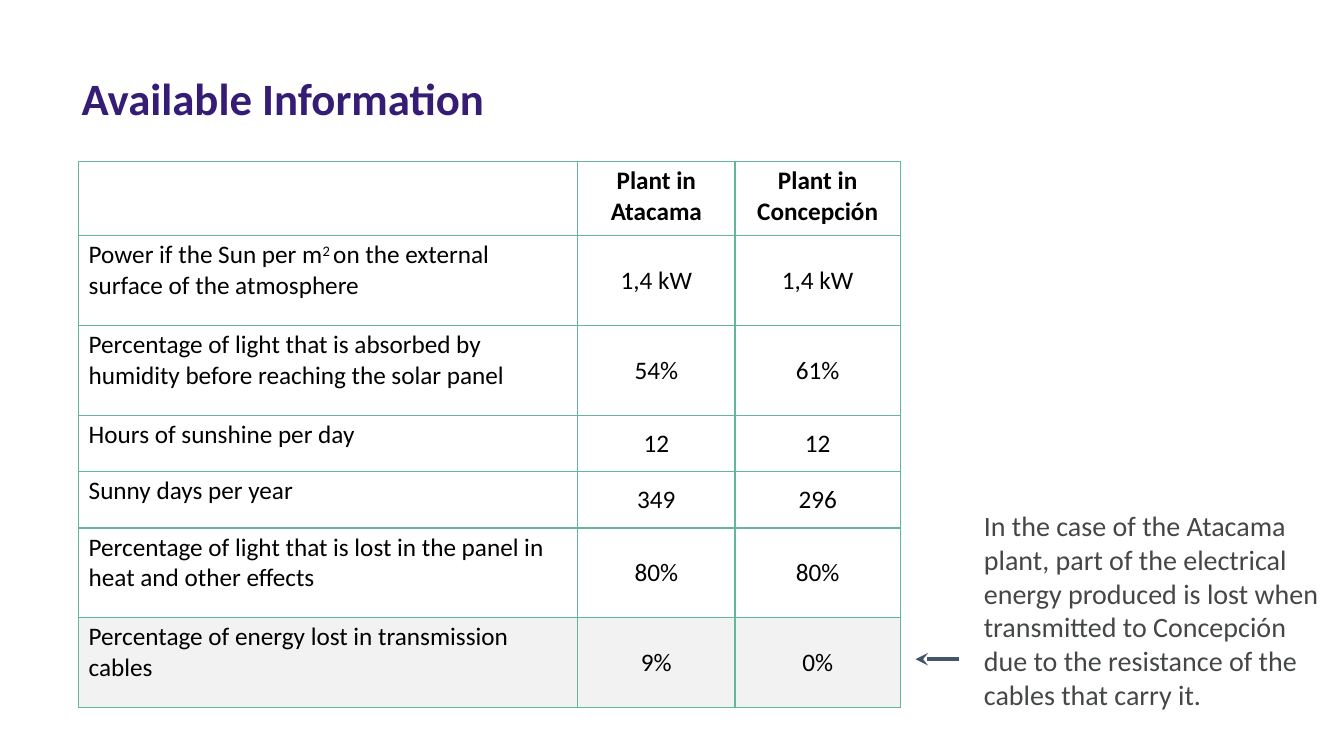
from dataclasses import dataclass
from typing import NamedTuple

from lxml.etree import SubElement
from pptx import Presentation
from pptx.dml.color import RGBColor
from pptx.enum.shapes import MSO_CONNECTOR
from pptx.enum.text import MSO_ANCHOR, PP_ALIGN
from pptx.oxml.ns import qn
from pptx.util import Inches, Pt


@dataclass(frozen=True)
class Theme:
    font: str = "Calibri"
    title_color: str = "351C75"
    table_color: str = "000000"
    note_color: str = "444746"
    border_color: str = "62B799"
    highlight_color: str = "F2F2F2"
    arrow_color: str = "44546A"
    title_size: int = 32
    table_size: int = 18
    note_size: int = 20


class Piece(NamedTuple):
    text: str
    baseline: int = 0


class Row(NamedTuple):
    height: float
    label: tuple[Piece, ...]
    atacama: str
    concepcion: str
    header: bool = False
    highlight: bool = False


THEME = Theme()
COLUMN_WIDTHS = (4.95, 1.56, 1.64)
ROWS = (
    Row(0.74, (), "Plant in Atacama", "Plant in Concepción", header=True),
    Row(0.89, (Piece("Power if the Sun per m"), Piece("2 ", 30),
               Piece("on the external surface of the atmosphere")), "1,4 kW", "1,4 kW"),
    Row(0.89, (Piece("Percentage of light that is absorbed by humidity before "
                     "reaching the solar panel"),), "54%", "61%"),
    Row(0.56, (Piece("Hours of sunshine per day"),), "12", "12"),
    Row(0.56, (Piece("Sunny days per year"),), "349", "296"),
    Row(0.89, (Piece("Percentage of light that is lost in the panel in heat "
                     "and other effects"),), "80%", "80%"),
    Row(0.89, (Piece("Percentage of energy lost in transmission cables"),),
        "9%", "0%", highlight=True),
)
NOTE = ("In the case of the Atacama plant, part of the electrical energy produced is lost "
        "when transmitted to Concepción due to the resistance of the cables that carry it.")


def set_attributes(target, values: dict) -> None:
    for name, value in values.items():
        setattr(target, name, value)


def write(paragraph, pieces: tuple[Piece, ...], size: int, color: str,
          bold: bool = False, align=PP_ALIGN.LEFT) -> None:
    paragraph.alignment = align
    set_attributes(paragraph.font, {"name": THEME.font, "size": Pt(size)})
    for piece in pieces:
        run = paragraph.add_run()
        run.text = piece.text
        set_attributes(run.font, {"name": THEME.font, "size": Pt(size), "bold": bold})
        run.font.color.rgb = RGBColor.from_string(color)
        if piece.baseline:
            run._r.get_or_add_rPr().set("baseline", str(piece.baseline * 1000))


def set_box(shape, left: float, top: float, width: float, height: float) -> None:
    set_attributes(shape, {"left": Inches(left), "top": Inches(top),
                           "width": Inches(width), "height": Inches(height)})
    set_attributes(shape.text_frame, {
        "word_wrap": True, "vertical_anchor": MSO_ANCHOR.TOP,
        "margin_left": Inches(0.1), "margin_right": Inches(0.1),
        "margin_top": Inches(0.05), "margin_bottom": Inches(0.05)})


def add_borders(cell) -> None:
    properties = cell._tc.get_or_add_tcPr()
    for position, side in enumerate(("a:lnL", "a:lnR", "a:lnT", "a:lnB")):
        border = SubElement(properties, qn(side), w=str(Pt(1)))
        fill = SubElement(border, qn("a:solidFill"))
        SubElement(fill, qn("a:srgbClr"), val=THEME.border_color)
        properties.insert(position, border)


def fill_cell(cell, pieces: tuple[Piece, ...], row: Row, is_label: bool) -> None:
    top_anchored = is_label or row.header
    set_attributes(cell, {
        "margin_left": Inches(0.1), "margin_right": Inches(0.1),
        "margin_top": Inches(0.04), "margin_bottom": Inches(0.04),
        "vertical_anchor": MSO_ANCHOR.TOP if top_anchored else MSO_ANCHOR.MIDDLE})
    if row.highlight:
        cell.fill.solid()
        cell.fill.fore_color.rgb = RGBColor.from_string(THEME.highlight_color)
    else:
        cell.fill.background()
    add_borders(cell)
    write(cell.text_frame.paragraphs[0], pieces, THEME.table_size, THEME.table_color,
          row.header, PP_ALIGN.LEFT if is_label else PP_ALIGN.CENTER)


def add_plant_table(slide) -> None:
    table = slide.shapes.add_table(
        len(ROWS), len(COLUMN_WIDTHS), Inches(0.78), Inches(1.6),
        Inches(sum(COLUMN_WIDTHS)), Inches(sum(row.height for row in ROWS))).table
    set_attributes(table, {"first_row": False, "horz_banding": False})
    for column, width in zip(table.columns, COLUMN_WIDTHS):
        column.width = Inches(width)
    for table_row, row in zip(table.rows, ROWS):
        table_row.height = Inches(row.height)
        contents = (row.label, (Piece(row.atacama),), (Piece(row.concepcion),))
        for index, (cell, pieces) in enumerate(zip(table_row.cells, contents)):
            fill_cell(cell, pieces, row, index == 0)


def add_note_arrow(slide) -> None:
    arrow = slide.shapes.add_connector(
        MSO_CONNECTOR.STRAIGHT, Inches(9.51), Inches(6.54), Inches(9.08), Inches(6.54))
    arrow.line.width = Pt(3)
    arrow.line.color.rgb = RGBColor.from_string(THEME.arrow_color)
    SubElement(arrow.line._get_or_add_ln(), qn("a:tailEnd"), type="stealth")
    SubElement(arrow._element.spPr, qn("a:effectLst"))


def main() -> None:
    presentation = Presentation()
    set_attributes(presentation, {"slide_width": Inches(13.33), "slide_height": Inches(7.5)})
    slide = presentation.slides.add_slide(presentation.slide_layouts[5])

    # Title
    title = slide.shapes.title
    set_box(title, 0.71, 0.65, 8.59, 0.64)
    write(title.text_frame.paragraphs[0], (Piece("Available Information"),),
          THEME.title_size, THEME.title_color, bold=True)

    # Comparison of the two plants
    add_plant_table(slide)

    # Note on transmission losses
    note = slide.shapes.add_textbox(0, 0, 0, 0)
    set_box(note, 9.66, 5, 3.58, 2.12)
    write(note.text_frame.paragraphs[0], (Piece(NOTE),), THEME.note_size, THEME.note_color)
    add_note_arrow(slide)

    presentation.save("out.pptx")


if __name__ == "__main__":
    main()
